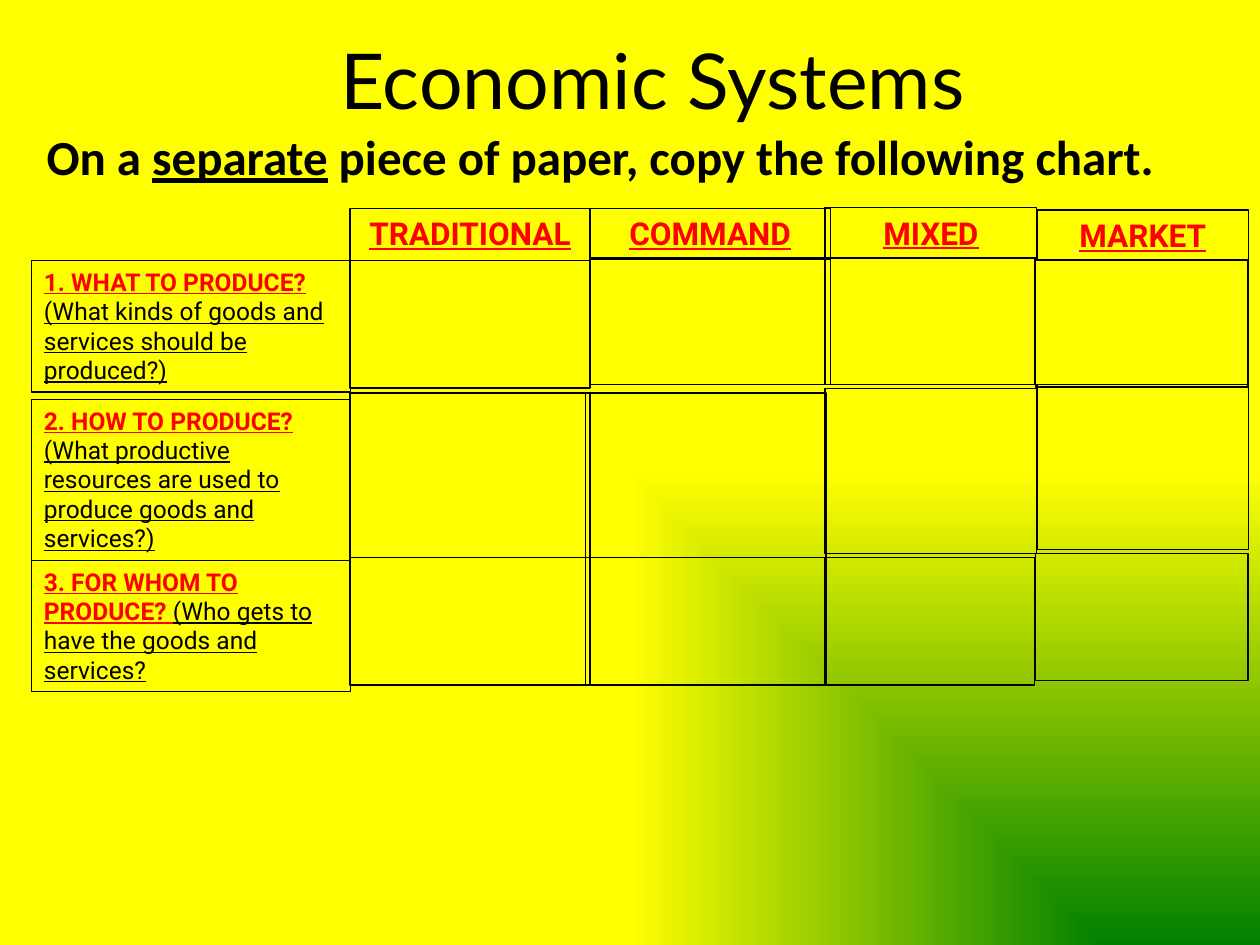
"""Build the Economic Systems slide with its comparison chart to copy."""
from typing import NamedTuple

import pptx
import pptx.dml.color
import pptx.enum.dml
import pptx.enum.shapes
import pptx.enum.text
import pptx.oxml.ns
import pptx.util
from lxml import etree

Pt = pptx.util.Pt
ALIGN = pptx.enum.text.PP_ALIGN
BLACK, RED, GREEN, YELLOW = "000000", "FF0000", "008000", "FFFF00"
QUESTION_LEFT, QUESTION_WIDTH = 18, 182.25
ROW_HEIGHTS = (72.75, 94.25, 72.75)


class Question(NamedTuple):
    top: float
    height: float
    heading: str
    detail: str


class Cell(NamedTuple):
    left: float
    top: float
    width: float


class System(NamedTuple):
    name: str
    header: Cell
    header_height: float
    answers: tuple[Cell, ...]


QUESTIONS = (
    Question(149, 75, "1. WHAT TO PRODUCE? ",
             "(What kinds of goods and services should be produced?)"),
    Question(228.25, 92, "2. HOW TO PRODUCE? ",
             "(What productive resources are used to produce goods and services?)"),
    Question(320.25, 75, "3. FOR WHOM TO PRODUCE? ",
             "(Who gets to have the goods and services?"),
)
SYSTEMS = (
    System("TRADITIONAL", Cell(200, 119, 137.25), 30,
           (Cell(200, 149, 137.25), Cell(200, 224.5, 137.25), Cell(200, 318.75, 137.25))),
    System("COMMAND", Cell(337.25, 119, 137.25), 29,
           (Cell(337.25, 147, 137.25), Cell(334.75, 224.5, 137.25), Cell(334.75, 318.75, 137.25))),
    System("MIXED", Cell(471.5, 118.5, 121), 29,
           (Cell(471.5, 147, 119.75), Cell(471.5, 222, 121), Cell(471.5, 318.75, 119.75))),
    System("MARKET", Cell(592.5, 120, 121), 29,
           (Cell(591.75, 148.5, 121.5), Cell(592.5, 219.75, 121), Cell(591.75, 316.25, 121.5))),
)


def rgb(value: str) -> pptx.dml.color.RGBColor:
    return pptx.dml.color.RGBColor.from_string(value)


def add_run(p, text: str, color: str = BLACK, **formats) -> None:
    r = p.add_run()
    r.text = text
    r.font.color.rgb = rgb(color)
    for key, value in formats.items():
        setattr(r.font, key, value)


def add_box(s, left: float, top: float, width: float, height: float):
    sp = s.shapes.add_shape(pptx.enum.shapes.MSO_SHAPE.RECTANGLE,
                            Pt(left), Pt(top), Pt(width), Pt(height))
    sp.shadow.inherit = False
    sp.fill.background()
    sp.line.color.rgb = rgb(BLACK)
    sp.line.width = Pt(0.75)
    return sp


def format_frame(sp, align):
    tf = sp.text_frame
    tf.word_wrap = True
    tf.auto_size = pptx.enum.text.MSO_AUTO_SIZE.SHAPE_TO_FIT_TEXT
    tf.vertical_anchor = pptx.enum.text.MSO_ANCHOR.TOP
    p = tf.paragraphs[0]
    p.alignment = align
    return p


def add_question(s, question: Question) -> None:
    sp = add_box(s, QUESTION_LEFT, question.top, QUESTION_WIDTH, question.height)
    p = format_frame(sp, ALIGN.LEFT)
    style = {"name": "Roboto", "size": Pt(14), "underline": True}
    add_run(p, question.heading, RED, bold=True, **style)
    add_run(p, question.detail, bold=False, **style)


def add_system(s, system: System) -> None:
    sp = add_box(s, *system.header, system.header_height)
    add_run(format_frame(sp, ALIGN.CENTER), system.name, RED,
            name="Roboto", size=Pt(18), bold=True, underline=True)
    for cell, height in zip(system.answers, ROW_HEIGHTS):
        add_box(s, *cell, height)


def set_background(s) -> None:
    qn = pptx.oxml.ns.qn
    fill = s.background.fill
    fill.gradient()
    for stop, position, color in zip(fill.gradient_stops, (0, 1), (GREEN, YELLOW)):
        stop.position = position
        stop.color.rgb = rgb(color)
    grad = s.element.find(".//" + qn("a:gradFill"))
    grad.remove(grad.find(qn("a:lin")))
    shade = etree.Element(qn("a:path"), {"path": "rect"})
    etree.SubElement(shade, qn("a:fillToRect"), {"l": "100000", "t": "100000"})
    grad.find(qn("a:gsLst")).addnext(shade)


def add_title(s) -> None:
    sp = s.shapes.title
    bounds = {"left": 49, "top": 0, "width": 648, "height": 90}
    for key, value in bounds.items():
        setattr(sp, key, Pt(value))
    tf = sp.text_frame
    tf.vertical_anchor = pptx.enum.text.MSO_ANCHOR.MIDDLE
    p = tf.paragraphs[0]
    p.alignment = ALIGN.CENTER
    add_run(p, "Economic Systems", name="Lato", size=Pt(44))


def add_instruction(s) -> None:
    sp = s.shapes.add_textbox(Pt(19.5), Pt(69), Pt(677.5), Pt(41))
    p = format_frame(sp, ALIGN.LEFT)
    for text, underline in (("On a ", False), ("separate", True),
                            (" piece of paper, copy the following chart.", False)):
        add_run(p, text, name="Calibri", size=Pt(28), bold=True, underline=underline)


def main() -> None:
    prs = pptx.Presentation()
    prs.slide_width, prs.slide_height = Pt(720), Pt(540)
    s = prs.slides.add_slide(prs.slide_layouts[5])
    set_background(s)
    add_title(s)
    add_instruction(s)
    for question in QUESTIONS:
        add_question(s, question)
    for system in SYSTEMS:
        add_system(s, system)
    prs.save("out.pptx")


if __name__ == "__main__":
    main()
